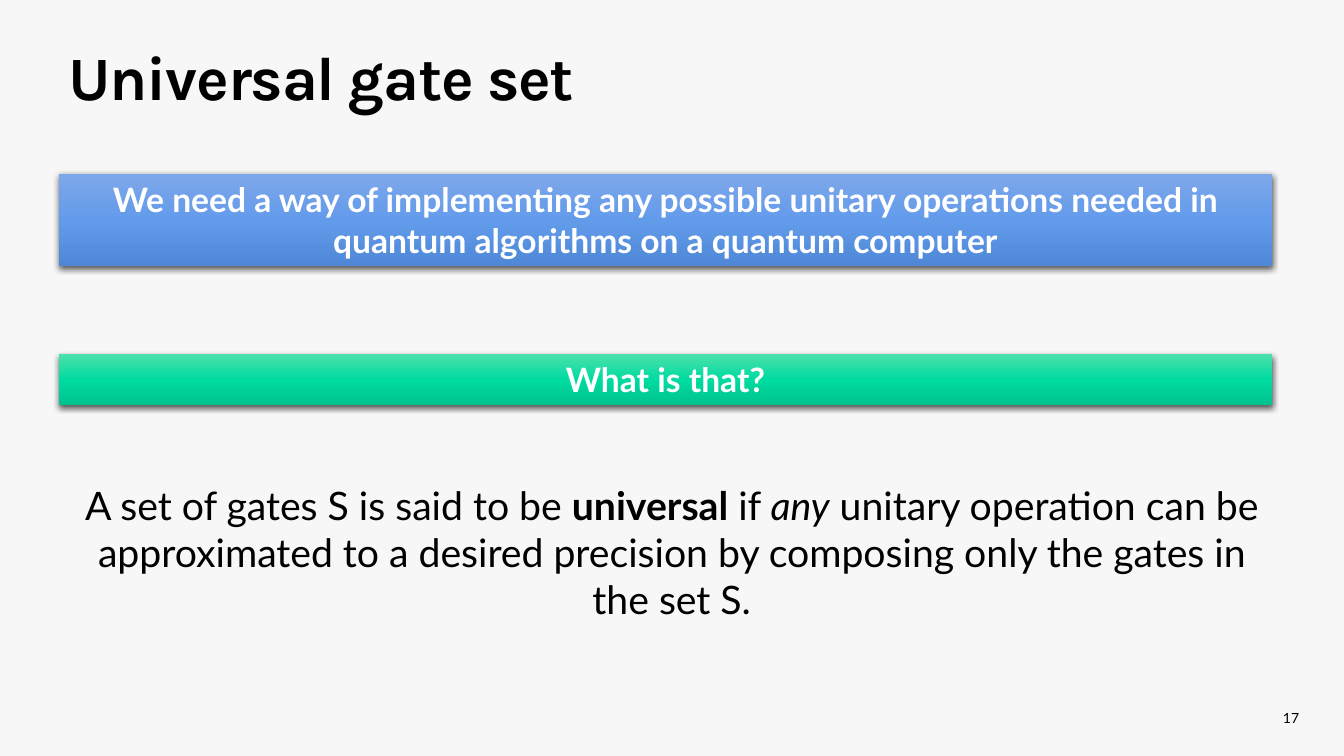
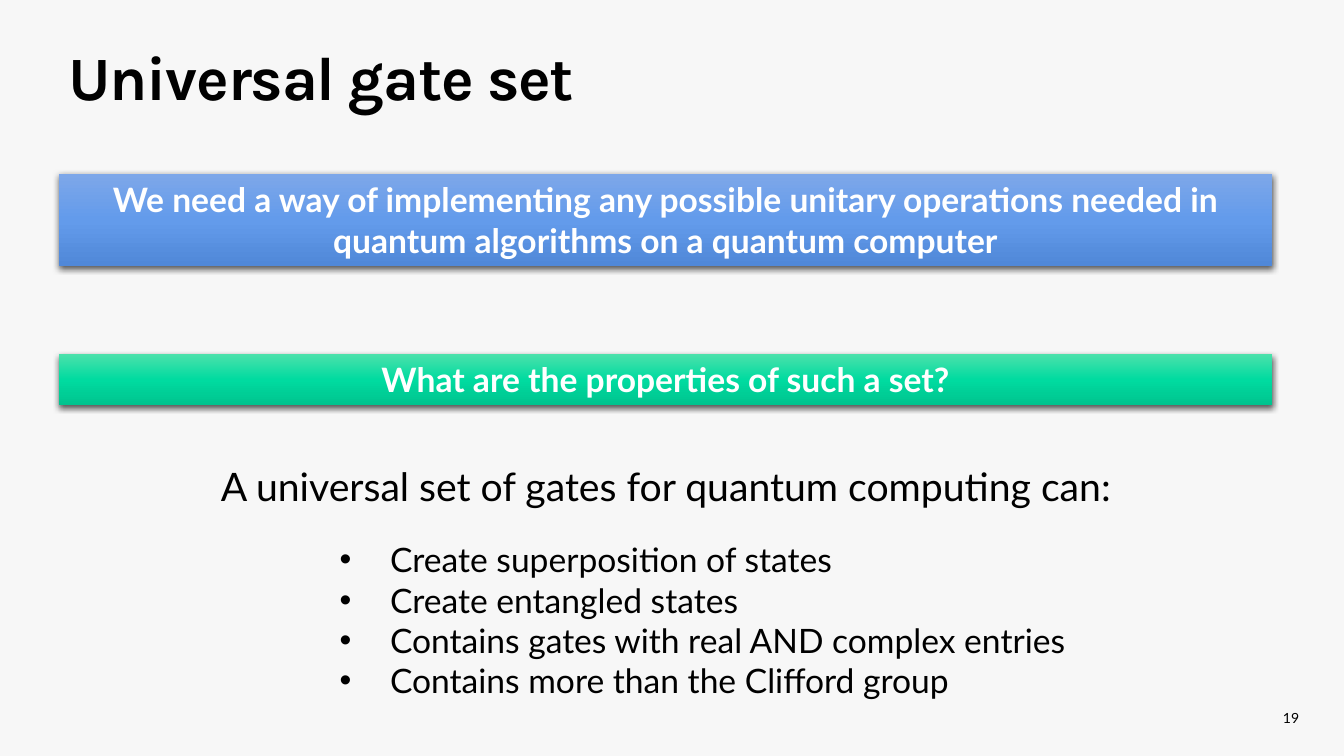
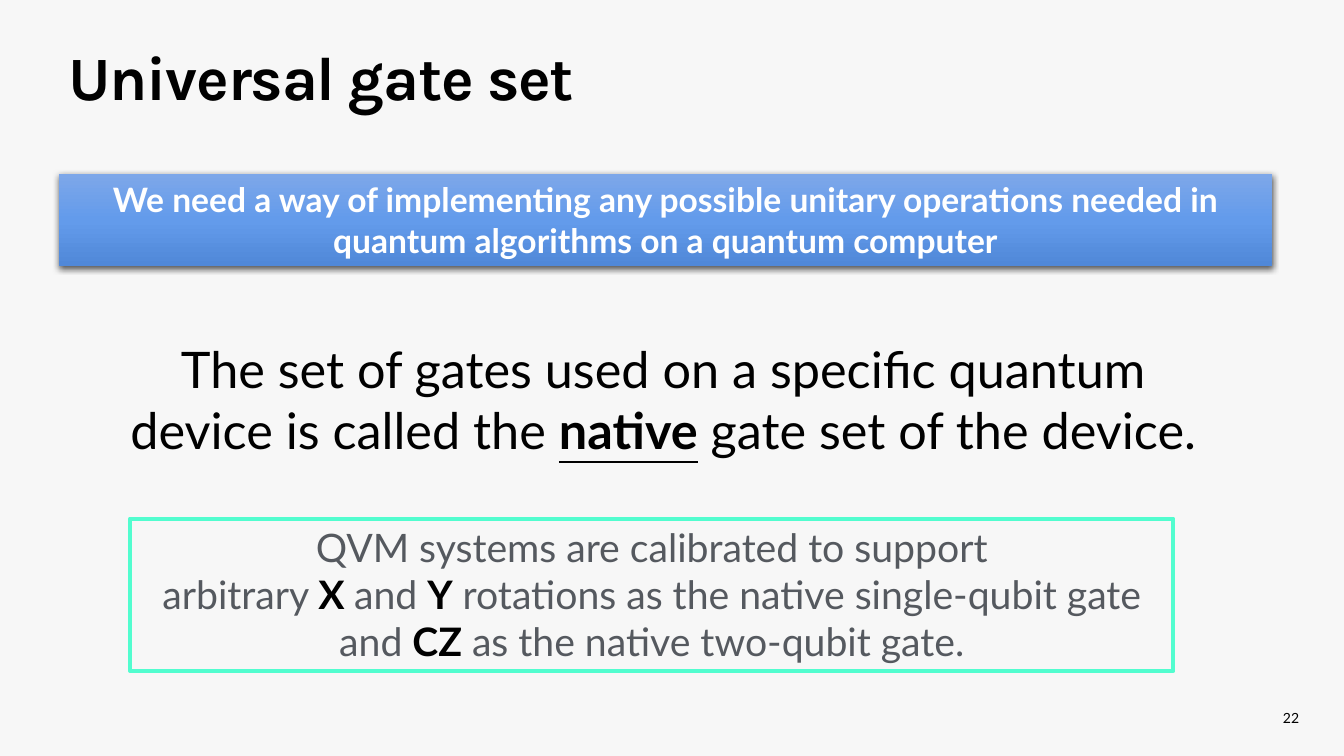
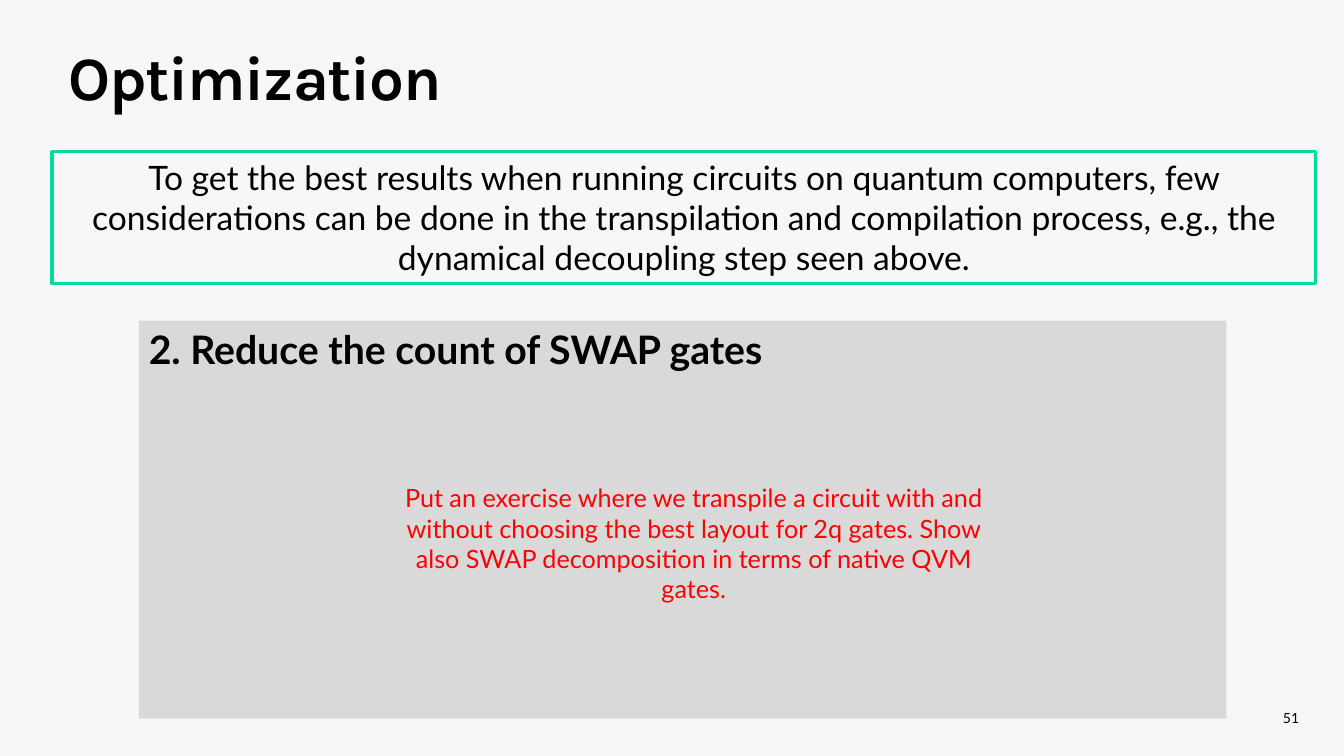
from pptx import Presentation
from pptx.dml.color import RGBColor
from pptx.enum.shapes import MSO_SHAPE
from pptx.enum.text import MSO_ANCHOR, PP_ALIGN
from pptx.oxml import parse_xml
from pptx.oxml.ns import nsdecls
from pptx.util import Cm, Pt

PAPER = RGBColor(0xF7, 0xF7, 0xF7)
BLACK = RGBColor(0x00, 0x00, 0x00)
WHITE = RGBColor(0xFF, 0xFF, 0xFF)
SLATE = RGBColor(0x55, 0x59, 0x5F)
RED = RGBColor(0xFF, 0x00, 0x00)
SILVER = RGBColor(0xD9, 0xD9, 0xD9)
MINT = RGBColor(0x52, 0xFD, 0xCF)
GREEN = RGBColor(0x02, 0xD9, 0x9F)
BLUES = (RGBColor(0x7D, 0xA7, 0xE9), RGBColor(0x63, 0x9B, 0xEB), RGBColor(0x50, 0x88, 0xD8))
GREENS = (RGBColor(0x4B, 0xE1, 0xAB), RGBColor(0x00, 0xDB, 0xA0), RGBColor(0x00, 0xC3, 0x8E))

HEAD = "Karla"
BODY = "Lato"
WIDE, HIGH = 33.87, 19.05
LEFT = 1.48
HARD = chr(160)
NEED = ("We need a way of implementing any possible unitary operations "
        "needed in quantum algorithms on a quantum computer")


def add_run(para, text, size, color=BLACK, bold=False, italic=False, under=False, face=BODY):
    run = para.add_run()
    run.text = text
    font = run.font
    font.name = face
    font.size = Pt(size)
    font.color.rgb = color
    font.bold = bold
    font.italic = italic
    font.underline = under
    return run


def set_frame(shape, align, anchor=MSO_ANCHOR.TOP):
    frame = shape.text_frame
    frame.word_wrap = True
    frame.vertical_anchor = anchor
    para = frame.paragraphs[0]
    para.alignment = align
    return para


def add_text(slide, box, align=PP_ALIGN.CENTER, anchor=MSO_ANCHOR.TOP):
    shape = slide.shapes.add_textbox(*map(Cm, box))
    return set_frame(shape, align, anchor)


def add_rect(slide, box, fill=None, line=None, width=0):
    shape = slide.shapes.add_shape(MSO_SHAPE.RECTANGLE, *map(Cm, box))
    shape.shadow.inherit = False
    if fill is None:
        shape.fill.background()
    else:
        shape.fill.solid()
        shape.fill.fore_color.rgb = fill
    if line is None:
        shape.line.fill.background()
    else:
        shape.line.color.rgb = line
        shape.line.width = Pt(width)
    return shape


def add_band(slide, box, tones, text):
    shape = add_rect(slide, box, tones[1])
    props = shape.element.spPr
    stops = "".join(
        f'<a:gs pos="{i * 50000}"><a:srgbClr val="{tone}"/></a:gs>'
        for i, tone in enumerate(tones))
    solid = props.find("{*}solidFill")
    props.replace(solid, parse_xml(
        f'<a:gradFill {nsdecls("a")} rotWithShape="1"><a:gsLst>{stops}</a:gsLst>'
        '<a:lin ang="5400000" scaled="0"/></a:gradFill>'))
    props.find("{*}effectLst").append(parse_xml(
        f'<a:outerShdw {nsdecls("a")} blurRad="{Pt(4.5)}" dist="{Pt(1.5)}" '
        'dir="5400000" algn="ctr" rotWithShape="0"><a:srgbClr val="000000">'
        '<a:alpha val="63000"/></a:srgbClr></a:outerShdw>'))
    add_run(set_frame(shape, PP_ALIGN.CENTER), text, 24, WHITE, bold=True)


def add_need(slide):
    add_band(slide, (LEFT, 4.39, 30.58, 2.31), BLUES, NEED)


def add_query(slide, text):
    add_band(slide, (LEFT, 8.93, 30.58, 1.28), GREENS, text)


def add_list(slide, box, items):
    first = add_text(slide, box, PP_ALIGN.LEFT)
    frame = slide.shapes[-1].text_frame
    for i, item in enumerate(items):
        para = frame.add_paragraph() if i else first
        props = para._p.get_or_add_pPr()
        props.set("marL", str(Cm(1.27)))
        props.set("indent", str(-Cm(1.27)))
        props.append(parse_xml(f'<a:buFont {nsdecls("a")} typeface="Arial"/>'))
        props.append(parse_xml(f'<a:buChar {nsdecls("a")} char="•"/>'))
        add_run(para, item, 24)


def add_page(deck, title, number):
    slide = deck.slides.add_slide(deck.slide_layouts[6])
    add_rect(slide, (0, 0, WIDE, HIGH), PAPER)
    para = add_text(slide, (25.37, 17.58, 7.62, 1.02), PP_ALIGN.RIGHT, MSO_ANCHOR.MIDDLE)
    add_run(para, str(number), 10)
    para = add_text(slide, (LEFT, 0.74, 31.5, 2.59), PP_ALIGN.LEFT, MSO_ANCHOR.MIDDLE)
    para.line_spacing = 0.9
    run = add_run(para, title, 44, bold=True, face=HEAD)
    run.font._element.set("spc", "-90")
    return slide


def add_task(slide, box):
    left, top, width, height = box
    add_rect(slide, box, SILVER)
    para = add_text(slide, (left, top, 16.94, 1.45), PP_ALIGN.LEFT)
    add_run(para, "2. Reduce the count of SWAP gates", 28, bold=True)
    para = add_text(slide, (left + 6.1, top + 3.96, 15.77, 3.33))
    add_run(para, "Put an exercise where we transpile a circuit with and without "
            "choosing the best layout for 2q gates. Show also SWAP decomposition "
            "in terms of native QVM gates.", 18, RED)


def meaning(deck):
    slide = add_page(deck, "Universal gate set", 17)
    add_need(slide)
    add_query(slide, "What is that?")
    para = add_text(slide, (1.45, 12.01, 30.96, 3.84))
    add_run(para, "A set of gates S is said to be ", 28)
    add_run(para, "universal", 28, bold=True)
    add_run(para, " if ", 28)
    add_run(para, "any", 28, italic=True)
    add_run(para, " unitary operation can be approximated to a desired precision "
            "by composing only the gates in the set S.", 28)


def traits(deck):
    slide = add_page(deck, "Universal gate set", 19)
    add_need(slide)
    add_query(slide, "What are the properties of such a set?")
    para = add_text(slide, (1.3, 11.53, 30.96, 1.45))
    add_run(para, "A universal set of gates for quantum computing can:", 28)
    add_list(slide, (8.31, 13.46, 19.38, 4.37), (
        "Create superposition of states",
        "Create entangled states",
        "Contains gates with real AND complex entries",
        "Contains more than the Clifford group"))


def native(deck):
    slide = add_page(deck, "Universal gate set", 22)
    add_need(slide)
    para = add_text(slide, (2.67, 8.4, 28.09, 3.33))
    add_run(para, "The set of gates used on a specific quantum device is called the ", 36)
    add_run(para, "native", 36, bold=True, under=True)
    add_run(para, " gate set of the device.", 36)
    frame = add_rect(slide, (3.28, 13.07, 26.29, 3.84), line=MINT, width=3)
    para = set_frame(frame, PP_ALIGN.CENTER)
    for text, strong in (
            (f"QVM systems are calibrated to support arbitrary{HARD}", False),
            (f"X{HARD}", True),
            (f"and{HARD}", False),
            ("Y", True),
            (f"{HARD}rotations as the native single-qubit gate and{HARD}", False),
            ("CZ", True),
            (f"{HARD}as the native two-qubit gate.", False)):
        add_run(para, text, 28, BLACK if strong else SLATE, bold=strong)


def tuning(deck):
    slide = add_page(deck, "Optimization", 51)
    frame = add_rect(slide, (1.31, 3.82, 31.85, 3.33), line=GREEN, width=2.25)
    add_run(set_frame(frame, PP_ALIGN.CENTER),
            "To get the best results when running circuits on quantum computers, "
            "few considerations can be done in the transpilation and compilation "
            "process, e.g., the dynamical decoupling step seen above.", 24)
    add_task(slide, (3.5, 8.08, 27.41, 10.03))


def main():
    deck = Presentation()
    deck.slide_width = Cm(WIDE)
    deck.slide_height = Cm(HIGH)
    for build in (meaning, traits, native, tuning):
        build(deck)
    deck.save("out.pptx")


if __name__ == "__main__":
    main()
